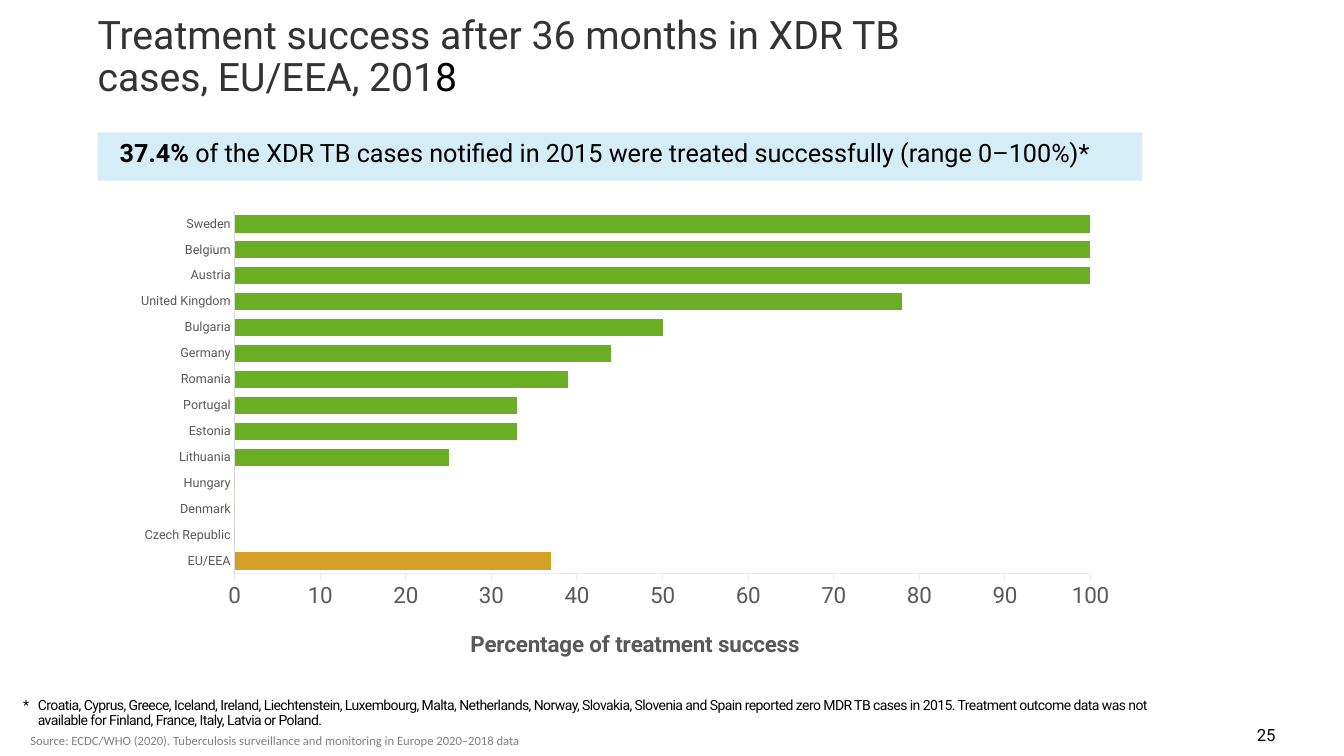
from dataclasses import dataclass

from lxml import etree
from pptx import Presentation
from pptx.chart.data import CategoryChartData
from pptx.dml.color import RGBColor
from pptx.enum.chart import XL_CHART_TYPE, XL_TICK_MARK
from pptx.enum.shapes import MSO_SHAPE
from pptx.enum.text import MSO_ANCHOR, MSO_AUTO_SIZE, PP_ALIGN
from pptx.oxml.ns import qn
from pptx.util import Pt

BAR_CLUSTERED = XL_CHART_TYPE.BAR_CLUSTERED
TICK_NONE, TICK_OUTSIDE = XL_TICK_MARK.NONE, XL_TICK_MARK.OUTSIDE
BANNER_SHAPE = MSO_SHAPE.SNIP_2_DIAG_RECTANGLE
TOP, MIDDLE = MSO_ANCHOR.TOP, MSO_ANCHOR.MIDDLE
NO_FIT, GROW = MSO_AUTO_SIZE.NONE, MSO_AUTO_SIZE.SHAPE_TO_FIT_TEXT
LEFT, RIGHT = PP_ALIGN.LEFT, PP_ALIGN.RIGHT
EMU_PER_PX = 9525
TITLE_ONLY = 5


@dataclass(frozen=True)
class Theme:
    font: str = "Roboto"
    source_font: str = "Calibri"
    black: str = "000000"
    title: str = "333333"
    label: str = "595959"
    source: str = "808080"
    banner: str = "ACDDEF"
    country: str = "69AE23"
    total: str = "D6A026"
    category_line: str = "D9D9D9"
    value_line: str = "EEECE1"
    title_size: int = 28
    banner_size: int = 18
    axis_size: int = 16
    number_size: int = 12
    note_size: int = 10
    small_size: int = 9


THEME = Theme()

SUCCESS = {
    "EU/EEA": 37, "Czech Republic": 0, "Denmark": 0, "Hungary": 0,
    "Lithuania": 25, "Estonia": 33, "Portugal": 33, "Romania": 39,
    "Germany": 44, "Bulgaria": 50, "United Kingdom": 78,
    "Austria": 100, "Belgium": 100, "Sweden": 100,
}


def px(length):
    return length * EMU_PER_PX


def emu_box(box):
    return [px(length) for length in box]


def style_font(font, size, color, name=THEME.font, bold=False):
    font.name = name
    font.size = Pt(size)
    font.bold = bold
    font.color.rgb = RGBColor.from_string(color)


def set_frame(frame, insets=(0, 0), anchor=TOP, fit=NO_FIT):
    frame.word_wrap = True
    frame.auto_size = fit
    frame.vertical_anchor = anchor
    frame.margin_left = frame.margin_right = px(insets[0])
    frame.margin_top = frame.margin_bottom = px(insets[1])


def set_indent(paragraph, margin, first_line=0):
    properties = paragraph._p.get_or_add_pPr()
    properties.set("marL", str(px(margin)))
    properties.set("indent", str(px(first_line)))


def add_text(slide, box, text, size, color=THEME.black, name=THEME.font, **frame_options):
    shape = slide.shapes.add_textbox(*emu_box(box))
    set_frame(shape.text_frame, **frame_options)
    paragraph = shape.text_frame.paragraphs[0]
    paragraph.add_run().text = text
    style_font(paragraph.font, size, color, name)
    return paragraph


def add_title(slide, box):
    title = slide.shapes.title
    title.left, title.top, title.width, title.height = emu_box(box)
    set_frame(title.text_frame)
    paragraph = title.text_frame.paragraphs[0]
    paragraph.alignment = LEFT
    paragraph.line_spacing = 0.9
    style_font(paragraph.font, THEME.title_size, THEME.title)
    paragraph.add_run().text = "Treatment success after 36 months in XDR TB cases, EU/EEA, 201"
    last_digit = paragraph.add_run()
    last_digit.text = "8"
    last_digit.font.color.rgb = RGBColor.from_string(THEME.black)


def add_banner(slide, box):
    banner = slide.shapes.add_shape(BANNER_SHAPE, *emu_box(box))
    banner.shadow.inherit = False
    for index in range(2):
        banner.adjustments[index] = 0
    banner.line.fill.background()
    banner.fill.solid()
    banner.fill.fore_color.rgb = RGBColor.from_string(THEME.banner)
    # Half-transparent fill
    color = banner._element.spPr.find(f"{qn('a:solidFill')}/{qn('a:srgbClr')}")
    etree.SubElement(color, qn("a:alpha")).set("val", "50000")

    set_frame(banner.text_frame, insets=(10, 5), fit=GROW)
    paragraph = banner.text_frame.paragraphs[0]
    paragraph.alignment = LEFT
    set_indent(paragraph, 11)
    style_font(paragraph.font, THEME.banner_size, THEME.black)
    share = paragraph.add_run()
    share.text = "37.4% "
    share.font.bold = True
    paragraph.add_run().text = (
        "of the XDR TB cases notified in 2015 were treated successfully (range 0–100%)*"
    )


def place_chart_part(parent, index, **fractions):
    """Give a chart part a fixed place, in fractions of the chart."""
    for old_layout in parent.findall(qn("c:layout")):
        parent.remove(old_layout)
    layout = etree.Element(qn("c:layout"))
    manual = etree.SubElement(layout, qn("c:manualLayout"))
    if "w" in fractions:
        etree.SubElement(manual, qn("c:layoutTarget")).set("val", "inner")
    for mode in ("xMode", "yMode"):
        etree.SubElement(manual, qn(f"c:{mode}")).set("val", "edge")
    for key, value in fractions.items():
        etree.SubElement(manual, qn(f"c:{key}")).set("val", str(value))
    parent.insert(index, layout)


def style_axis(axis, size, line_color, tick_mark):
    axis.has_major_gridlines = False
    axis.major_tick_mark = tick_mark
    axis.minor_tick_mark = TICK_NONE
    axis.format.line.width = Pt(0.75)
    axis.format.line.color.rgb = RGBColor.from_string(line_color)
    style_font(axis.tick_labels.font, size, THEME.label)


def add_success_chart(slide, box):
    data = CategoryChartData(number_format="0")
    data.categories = SUCCESS.keys()
    data.add_series("Series 1", SUCCESS.values())
    chart = slide.shapes.add_chart(BAR_CLUSTERED, *emu_box(box), data).chart
    chart.has_legend = False
    chart.has_title = False
    style_font(chart.font, THEME.note_size, THEME.black)

    # Bars: the EU/EEA total stands out from the countries
    plot = chart.plots[0]
    plot.gap_width = 50
    plot.overlap = 70
    plot.vary_by_categories = False
    series = plot.series[0]
    for part, color in ((series, THEME.country), (series.points[0], THEME.total)):
        part.format.fill.solid()
        part.format.fill.fore_color.rgb = RGBColor.from_string(color)

    # Axes
    style_axis(chart.category_axis, THEME.small_size, THEME.category_line, TICK_NONE)
    value_axis = chart.value_axis
    style_axis(value_axis, THEME.axis_size, THEME.value_line, TICK_OUTSIDE)
    value_axis.minimum_scale, value_axis.maximum_scale = 0, 100
    value_axis.major_unit = 10
    value_axis.tick_labels.number_format = "0"
    value_axis.tick_labels.number_format_is_linked = False
    paragraph = value_axis.axis_title.text_frame.paragraphs[0]
    paragraph.add_run().text = "Percentage of treatment success"
    style_font(paragraph.font, THEME.axis_size, THEME.label, bold=True)

    plot_area = chart._chartSpace.find(f".//{qn('c:plotArea')}")
    place_chart_part(plot_area, 0, x=0.11, y=0.02, w=0.85, h=0.77)
    place_chart_part(plot_area.find(f".//{qn('c:title')}"), 1, x=0.34, y=0.9)


def add_footer(slide, box):
    left, top, width, _ = box
    # Footnote with a hanging asterisk
    note = add_text(
        slide, (left, top, 1098, 38),
        "*\tCroatia, Cyprus, Greece, Iceland, Ireland, Liechtenstein, Luxembourg, Malta, "
        "Netherlands, Norway, Slovakia, Slovenia and Spain reported zero MDR TB cases in 2015. "
        "Treatment outcome data was not available for Finland, France, Italy, Latvia or Poland.",
        THEME.note_size, insets=(10, 5), fit=GROW)
    note.line_spacing = 0.9
    set_indent(note, 14, -14)
    note.runs[0]._r.get_or_add_rPr().set("spc", "-40")

    # Source line
    source = add_text(
        slide, (left + 17, top + 40, 546, 20),
        "Source: ECDC/WHO (2020). Tuberculosis surveillance and monitoring in Europe 2020–2018 data",
        THEME.small_size, THEME.source, THEME.source_font)
    source.line_spacing = 0.9

    # Slide number
    number = add_text(slide, (left + width - 269, top + 21, 269, 38), "25",
                      THEME.number_size, insets=(10, 4), anchor=MIDDLE)
    number.alignment = RIGHT


def main():
    presentation = Presentation()
    presentation.slide_width, presentation.slide_height = px(1280), px(720)
    slide = presentation.slides.add_slide(presentation.slide_layouts[TITLE_ONLY])
    add_title(slide, (93, 15, 824, 86))
    add_banner(slide, (93, 126, 995, 46))
    add_success_chart(slide, (118, 192, 959, 449))
    add_footer(slide, (12, 660, 1213, 60))
    presentation.save("out.pptx")


if __name__ == "__main__":
    main()
